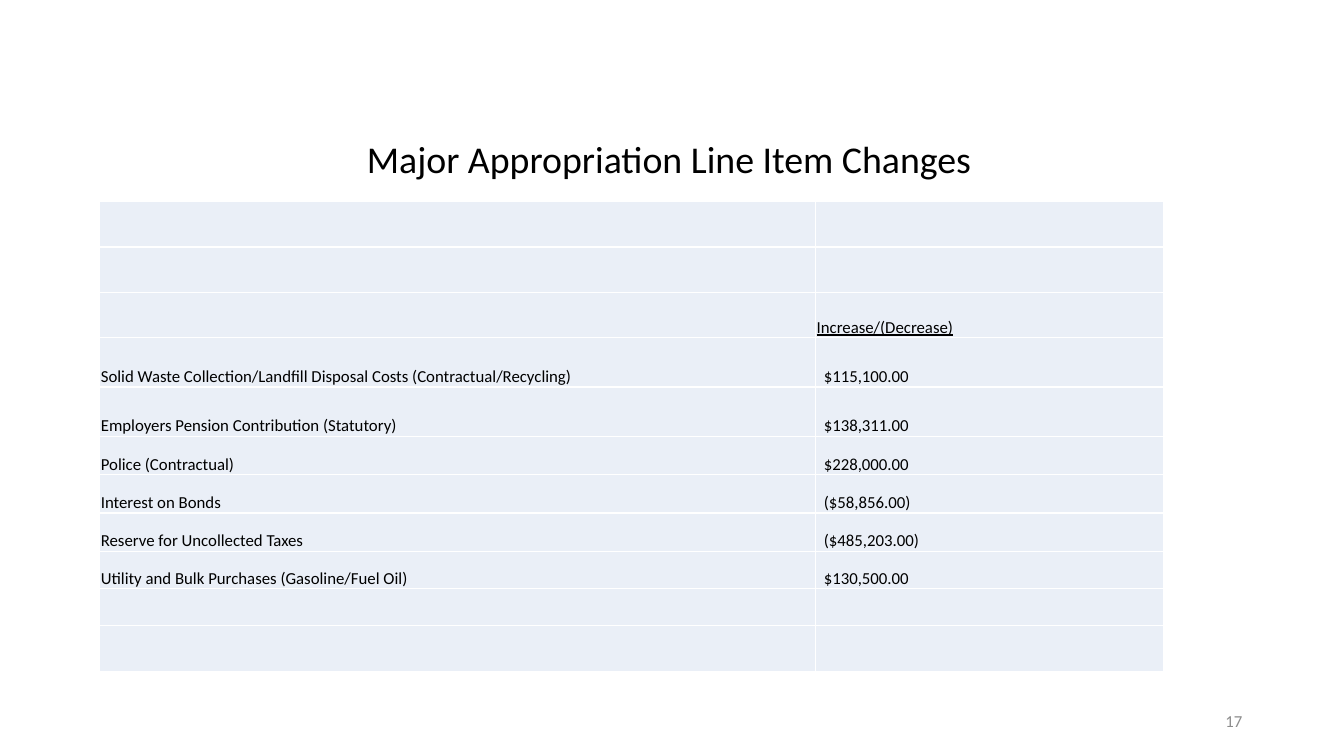
from lxml import etree
from pptx import Presentation
from pptx.dml.color import RGBColor
from pptx.enum import text
from pptx.oxml import ns
from pptx.util import Inches, Pt

TITLE = "Major Appropriation Line Item Changes"
PAGE_NUMBER = "17"
# (line item, change, row height in inches)
ROWS = [
    ("", "", 0.45),
    ("", "", 0.45),
    ("", "Increase/(Decrease)", 0.45),
    ("Solid Waste Collection/Landfill Disposal Costs (Contractual/Recycling)", "$115,100.00", 0.49),
    ("Employers Pension Contribution (Statutory)", "$138,311.00", 0.49),
    ("Police (Contractual)", "$228,000.00", 0.38),
    ("Interest on Bonds", "($58,856.00)", 0.38),
    ("Reserve for Uncollected Taxes", "($485,203.00)", 0.38),
    ("Utility and Bulk Purchases (Gasoline/Fuel Oil)", "$130,500.00", 0.37),
    ("", "", 0.37),
    ("", "", 0.45),
]
HEADER_ROW = 2
COLUMN_WIDTHS = (7.1, 3.45)
TABLE_LEFT, TABLE_TOP = 0.99, 2
CELL_INSET, AMOUNT_INSET = 0.01, 0.08

THEME = {
    "font": "Calibri",
    "title_size": 27,
    "body_size": 12,
    "ink": "000000",
    "muted": "8C8C8C",
    "cell": "EAEFF7",
    "border": "FFFFFF",
}


def style(p, size, color, underline=False):
    for r in p.runs:
        r.font.name = THEME["font"]
        r.font.size = Pt(size)
        r.font.color.rgb = RGBColor.from_string(color)
        r.font.underline = underline


def add_label(slide, box, words, size, color, align):
    tf = slide.shapes.add_textbox(*map(Inches, box)).text_frame
    tf.word_wrap = True
    tf.vertical_anchor = text.MSO_ANCHOR.MIDDLE
    p = tf.paragraphs[0]
    p.text = words
    p.alignment = align
    style(p, size, color)
    return p


def add_borders(cell):
    tc_pr = cell._tc.get_or_add_tcPr()
    for side in ("a:lnL", "a:lnR", "a:lnT", "a:lnB"):
        line = etree.SubElement(tc_pr, ns.qn(side), w=str(Pt(1)))
        fill = etree.SubElement(line, ns.qn("a:solidFill"))
        etree.SubElement(fill, ns.qn("a:srgbClr"), val=THEME["border"])


def fill_cell(cell, words, inset, underline):
    add_borders(cell)
    cell.fill.solid()
    cell.fill.fore_color.rgb = RGBColor.from_string(THEME["cell"])
    cell.margin_left = Inches(inset)
    cell.margin_right = cell.margin_top = Inches(CELL_INSET)
    cell.margin_bottom = 0
    cell.vertical_anchor = text.MSO_ANCHOR.BOTTOM
    if words:
        p = cell.text_frame.paragraphs[0]
        p.text = words
        style(p, THEME["body_size"], THEME["ink"], underline)


def add_changes_table(slide):
    size = sum(COLUMN_WIDTHS), sum(height for _, _, height in ROWS)
    table = slide.shapes.add_table(
        len(ROWS), len(COLUMN_WIDTHS),
        *map(Inches, (TABLE_LEFT, TABLE_TOP, *size))).table
    table.first_row = table.horz_banding = False
    for column, width in zip(table.columns, COLUMN_WIDTHS):
        column.width = Inches(width)
    for i, (item, change, height) in enumerate(ROWS):
        table.rows[i].height = Inches(height)
        is_header = i == HEADER_ROW
        change_inset = CELL_INSET if is_header else AMOUNT_INSET
        fill_cell(table.cell(i, 0), item, CELL_INSET, False)
        fill_cell(table.cell(i, 1), change, change_inset, is_header)


def main():
    prs = Presentation()
    prs.slide_width, prs.slide_height = Inches(13.33), Inches(7.5)
    slide = prs.slides.add_slide(prs.slide_layouts[6])
    add_label(slide, (9.42, 6.95, 3, 0.4), PAGE_NUMBER,
              THEME["body_size"], THEME["muted"], text.PP_ALIGN.RIGHT)
    title = add_label(slide, (3.54, 1.25, 6.38, 0.69), TITLE,
                      THEME["title_size"], THEME["ink"], text.PP_ALIGN.LEFT)
    title.line_spacing = 0.9
    add_changes_table(slide)
    prs.save("out.pptx")


if __name__ == "__main__":
    main()
